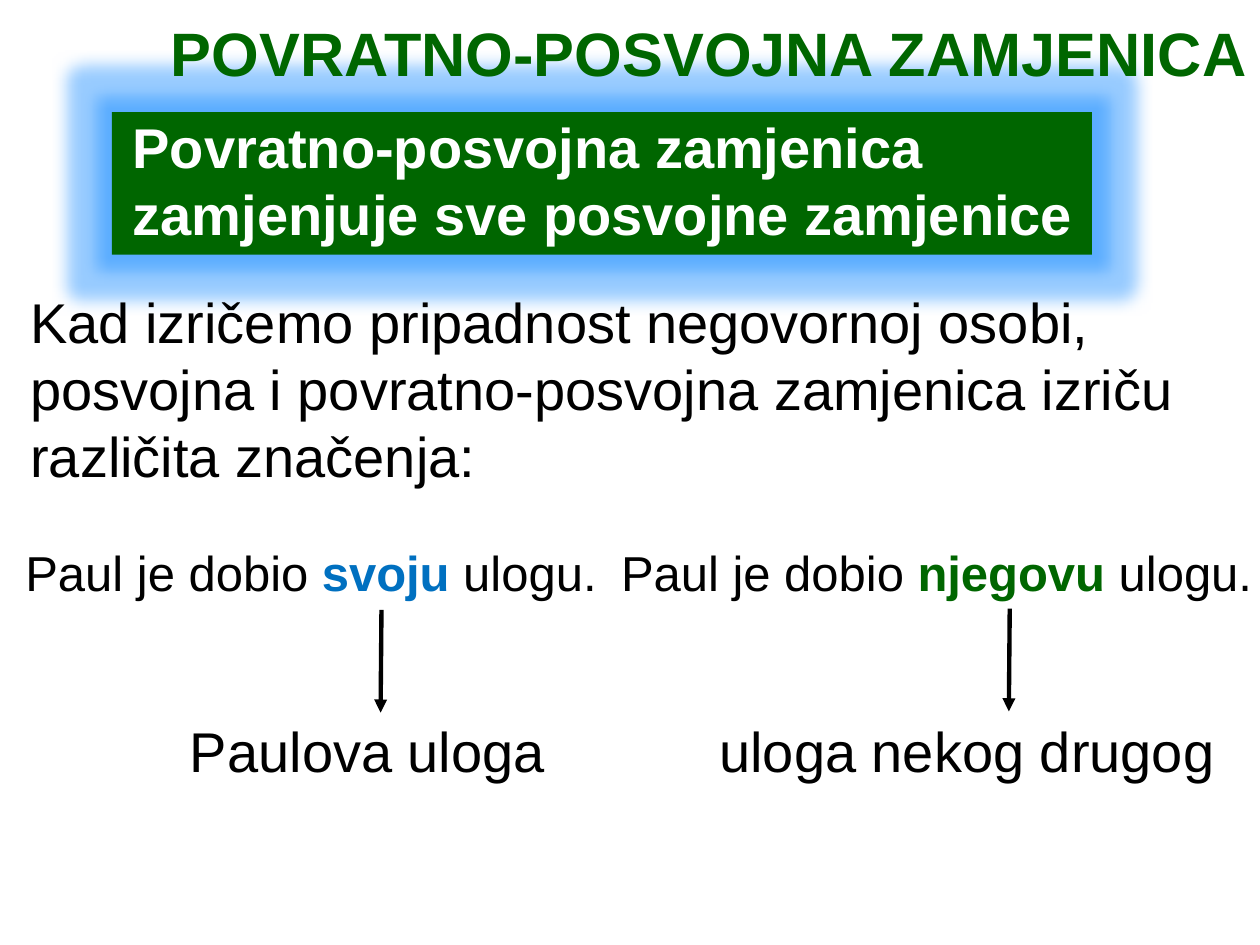
from pptx import Presentation
from pptx.dml.color import RGBColor
from pptx.enum.shapes import MSO_CONNECTOR, MSO_SHAPE
from pptx.enum.text import MSO_ANCHOR, MSO_AUTO_SIZE, PP_ALIGN
from pptx.oxml.ns import qn
from pptx.util import Pt
from lxml import etree

RECT = MSO_SHAPE.RECTANGLE
STRAIGHT = MSO_CONNECTOR.STRAIGHT
TOP, BOTTOM = MSO_ANCHOR.TOP, MSO_ANCHOR.BOTTOM
FIT, FIXED = MSO_AUTO_SIZE.SHAPE_TO_FIT_TEXT, MSO_AUTO_SIZE.NONE
LEFT, RIGHT = PP_ALIGN.LEFT, PP_ALIGN.RIGHT

COLORS = {
    "green": "006600",
    "blue": "0070C0",
    "glow": "0080FF",
    "black": "000000",
    "white": "FFFFFF",
}


class Deck:
    font = "Arial"

    def __init__(self, width, height):
        self.prs = Presentation()
        self.prs.slide_width, self.prs.slide_height = Pt(width), Pt(height)
        self.s = self.prs.slides.add_slide(self.prs.slide_layouts[6])

    def color(self, name):
        return RGBColor.from_string(COLORS[name])

    def glow_box(self, x, y, w, h, fill, glow, radius):
        sp = self.s.shapes.add_shape(RECT, Pt(x), Pt(y), Pt(w), Pt(h))
        sp.shadow.inherit = False
        sp.fill.solid()
        sp.fill.fore_color.rgb = self.color(fill)
        sp.line.fill.background()
        effects = sp._element.spPr.find(qn("a:effectLst"))
        halo = etree.SubElement(effects, qn("a:glow"), rad=str(Pt(radius)))
        clr = etree.SubElement(halo, qn("a:srgbClr"), val=COLORS[glow])
        etree.SubElement(clr, qn("a:alpha"), val="40000")

    def text(self, x, y, w, h, runs, size, wrap=True, fit=FIT, anchor=TOP, align=LEFT):
        sp = self.s.shapes.add_textbox(Pt(x), Pt(y), Pt(w), Pt(h))
        tf = sp.text_frame
        tf.word_wrap, tf.auto_size, tf.vertical_anchor = wrap, fit, anchor
        p = tf.paragraphs[0]
        p.alignment = align
        for content, color, bold in runs:
            r = p.add_run()
            r.text = content
            r.font.name, r.font.size, r.font.bold = self.font, Pt(size), bold
            r.font.color.rgb = self.color(color)
        return tf

    def arrow(self, x1, y1, x2, y2):
        c = self.s.shapes.add_connector(STRAIGHT, Pt(x1), Pt(y1), Pt(x2), Pt(y2))
        c.line.color.rgb = self.color("black")
        c.line.width = Pt(2.5)
        etree.SubElement(c.line._get_or_add_ln(), qn("a:tailEnd"), type="triangle")
        etree.SubElement(c._element.spPr, qn("a:effectLst"))


def main():
    deck = Deck(720, 540)

    deck.glow_box(64, 64, 560, 81.5, "green", "glow", 18)
    definition = "Povratno-posvojna zamjenica zamjenjuje sve posvojne zamjenice"
    tf = deck.text(70.8, 47, 567, 97, [(definition, "white", True)], 32,
                   fit=FIXED, anchor=BOTTOM)
    tf.margin_left = tf.margin_right = Pt(5)
    tf.margin_top = tf.margin_bottom = Pt(2.9)
    tf.paragraphs[0].space_before = Pt(10)

    explanation = ("Kad izričemo pripadnost negovornoj osobi, posvojna i "
                   "povratno-posvojna zamjenica izriču različita značenja:")
    deck.text(10.2, 160.5, 688, 124, [(explanation, "black", False)], 32)

    tf = deck.text(-32, 0, 752, 55, [("POVRATNO-POSVOJNA ZAMJENICA", "green", True)],
                   35, fit=FIXED, anchor=BOTTOM, align=RIGHT)
    tf.paragraphs[0].line_spacing = 0.9

    examples = [
        (7.4, 345, "svoju ", "blue", 101.5, 219, "Paulova uloga", 218, 348.5),
        (347.8, 380, "njegovu ", "green", 404, 299.5, "uloga nekog drugog", 577, 347.8),
    ]
    for x, w, pronoun, color, mx, mw, meaning, ax, ay in examples:
        sentence = [("Paul je dobio ", "black", False), (pronoun, color, True),
                    ("ulogu.", "black", False)]
        deck.text(x, 306.7, w, 41, sentence, 28, wrap=False)
        deck.text(mx, 406, mw, 46, [(meaning, "black", False)], 32, wrap=False)
        deck.arrow(ax, ay, ax - 0.5, ay + 58.7)

    deck.prs.save("out.pptx")


if __name__ == "__main__":
    main()
